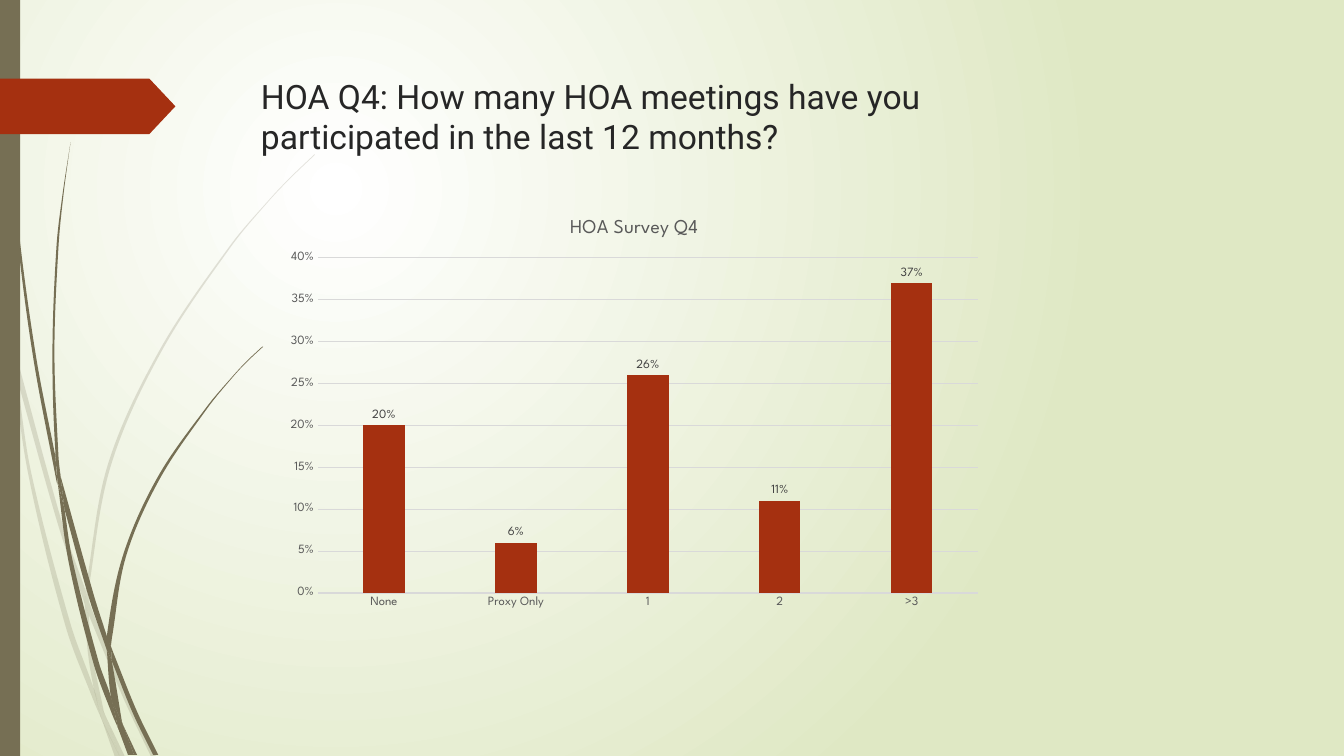
import math
from dataclasses import dataclass

from lxml import etree
from pptx import Presentation, util as u
from pptx.chart import data as chart_data
from pptx.dml import color
from pptx.enum import chart as kinds, shapes, text
from pptx.oxml import ns


@dataclass(frozen=True)
class Theme:
    olive: str = "766F54"
    red: str = "A53010"
    glow: str = "FFFFFF"
    meadow: str = "DFE8C4"
    heading: str = "262626"
    muted: str = "595959"
    label: str = "404040"
    rule: str = "D9D9D9"
    black: str = "000000"
    heading_font: str = "Roboto"
    chart_font: str = "League Spartan"
    heading_size: int = 24
    chart_title_size: int = 14
    chart_size: int = 10
    axis_size: int = 9


THEME = Theme()

PALE_BLADES = [
    ([(0.11, 3.5), (0.09, 3.22), (0, 2.82)], [(0, 2.99), (0.1, 3.44), (0.11, 3.5)]),
    ([(0.17, 3.76), (0.58, 5.22), (0.84, 5.99)], [(0.85, 5.86), (0.62, 5.2), (0.14, 3.45)]),
    ([(0.88, 6.1), (1.23, 6.94), (1.5, 7.51)], [(1.55, 7.51), (1.27, 6.92), (0.92, 6.07), (0.88, 5.96)]),
    ([(1.05, 7.11), (1.19, 7.51)], [(1.24, 7.51), (1.05, 7.11)]),
    ([(0.11, 3.5), (0.28, 4.7), (0.65, 6.21), (0.92, 6.93), (1.01, 7.14)],
     [(0.99, 7.07), (0.93, 6.83), (0.7, 6.19), (0.31, 4.69), (0.17, 3.76)]),
    ([(0.84, 5.99), (0.87, 6.46), (0.93, 6.83), (0.96, 6.92), (1.05, 7.11)],
     [(1.03, 7.06), (0.91, 6.46), (0.88, 6.1)]),
    ([(0.88, 5.96), (0.88, 5.84), (1.1, 4.62), (1.6, 3.49), (2.29, 2.45), (2.68, 1.98), (2.9, 1.75), (3.12, 1.54)],
     [(3.12, 1.53), (2.89, 1.75), (2.68, 1.97), (2.28, 2.44), (1.58, 3.48), (1.07, 4.61), (0.85, 5.84)]),
    ([(1.01, 7.14), (1.14, 7.51)], [(1.19, 7.51), (1.01, 7.14)]),
    ([(0.88, 6.1), (0.88, 5.96)], [(0.85, 5.86), (0.84, 5.99)]),
    ([(0.93, 6.83), (0.99, 7.07), (1.01, 7.14), (1.19, 7.51)], [(1.05, 7.11), (0.96, 6.92), (0.93, 6.83)]),
]
DARK_BLADES = [
    ([(0.04, 0), (0.05, 0.48), (0.08, 1.09), (0.19, 2.32), (0.36, 3.55), (0.55, 4.53)],
     [(0.57, 4.81), (0.56, 4.77), (0.33, 3.55), (0.17, 2.33), (0.07, 1.1), (0.04, 0.48), (0.03, 0)]),
    ([(0.64, 5.05), (0.88, 5.92), (1.06, 6.45)], [(1.06, 6.31), (0.93, 5.9), (0.6, 4.72)]),
    ([(1.11, 6.56), (1.32, 7.08), (1.52, 7.49)], [(1.57, 7.49), (1.36, 7.06), (1.13, 6.49), (1.1, 6.41)]),
    ([(0.57, 4.77), (0.68, 5.57), (0.93, 6.59), (1.11, 7.08), (1.17, 7.22)],
     [(1.16, 7.17), (1.1, 6.91), (0.98, 6.57), (0.72, 5.56), (0.64, 5.05)]),
    ([(0.6, 4.72), (0.58, 4.53), (0.54, 3.49), (0.58, 2.45), (0.63, 1.93), (0.7, 1.41)],
     [(0.7, 1.41), (0.62, 1.93), (0.56, 2.45), (0.52, 3.49), (0.55, 4.49), (0.6, 4.72)]),
    ([(1.22, 7.19), (1.33, 7.49)], [(1.36, 7.49), (1.22, 7.19)]),
    ([(0.57, 4.77), (0.64, 5.05)], [(0.6, 4.72), (0.55, 4.49), (0.55, 4.53)]),
    ([(1.11, 6.33), (1.25, 5.52), (1.58, 4.76), (2.05, 4.06), (2.31, 3.74), (2.45, 3.59), (2.61, 3.44)],
     [(2.6, 3.44), (2.45, 3.58), (2.31, 3.73), (2.04, 4.05), (1.56, 4.74), (1.22, 5.51), (1.06, 6.31),
      (1.1, 6.41)]),
    ([(1.17, 7.22), (1.27, 7.49)], [(1.31, 7.49), (1.17, 7.22)]),
    ([(1.06, 6.45), (1.1, 6.91), (1.16, 7.06), (1.22, 7.19)], [(1.21, 7.16), (1.11, 6.56), (1.09, 6.51)]),
    ([(1.06, 6.45), (1.09, 6.51), (1.11, 6.56)], [(1.1, 6.41), (1.06, 6.31)]),
    ([(1.1, 6.91), (1.16, 7.17), (1.17, 7.22), (1.3, 7.49)],
     [(1.33, 7.49), (1.22, 7.19), (1.16, 7.06), (1.1, 6.91)]),
]


def rgb(value):
    return color.RGBColor.from_string(value)


def style_font(font, name, size, shade):
    font.name, font.size, font.bold = name, u.Pt(size), False
    font.color.rgb = rgb(shade)


def style_shape(shape, shade, alpha=None):
    shape.shadow.inherit = False
    shape.fill.solid()
    shape.fill.fore_color.rgb = rgb(shade)
    shape.line.fill.background()
    if alpha is not None:
        tint = shape._element.spPr.find(".//" + ns.qn("a:srgbClr"))
        etree.SubElement(tint, ns.qn("a:alpha"), val=str(alpha * 1000))


def paint_background(page):
    fill = page.background.fill
    fill.gradient()
    for stop, shade, position in zip(fill.gradient_stops, (THEME.glow, THEME.meadow), (0, 1)):
        stop.color.rgb = rgb(shade)
        stop.position = position
    linear = page._element.find(".//" + ns.qn("a:lin"))
    radial = etree.Element(ns.qn("a:path"), path="circle")
    etree.SubElement(radial, ns.qn("a:fillToRect"), l="50000", t="50000", r="100000", b="100000")
    linear.getparent().replace(linear, radial)


def handle(anchor, before, after, length):
    reach = length / 3 / (math.dist(before, after) or 1)
    return tuple(a + (end - start) * reach for a, start, end in zip(anchor, before, after))


def bend_edge(points, segments):
    padded = [points[0], *points, points[-1]]
    for a, b, c, d, segment in zip(padded, padded[1:], padded[2:], padded[3:], segments):
        length = math.dist(b, c)
        curve = etree.Element(ns.qn("a:cubicBezTo"))
        for x, y in (handle(b, a, c, length), handle(c, d, b, length), c):
            etree.SubElement(curve, ns.qn("a:pt"), x=str(round(x)), y=str(round(y)))
        segment.getparent().replace(segment, curve)


def add_blade(page, near_edge, far_edge, alpha):
    points = [(u.Inches(x), u.Inches(y)) for x, y in near_edge + far_edge]
    builder = page.shapes.build_freeform(*points[0], scale=1.0)
    builder.add_line_segments(points[1:], close=True)
    blade = builder.convert_to_shape()
    style_shape(blade, THEME.olive, alpha)
    geometry = blade._element.spPr.find(ns.qn("a:custGeom"))
    anchors = [(int(p.get("x")), int(p.get("y"))) for p in geometry.iter(ns.qn("a:pt"))]
    segments = list(geometry.iter(ns.qn("a:lnTo")))
    turn = len(near_edge)
    bend_edge(anchors[:turn], segments[:turn - 1])
    bend_edge(anchors[turn:], segments[turn:])


def add_block(page, kind, left, top, width, height, shade):
    block = page.shapes.add_shape(kind, *map(u.Inches, (left, top, width, height)))
    style_shape(block, shade)
    return block


def add_heading(page, words):
    box = page.shapes.add_textbox(*map(u.Inches, (2.49, 0.7, 8, 1.1)))
    frame = box.text_frame
    frame.word_wrap = True
    frame.vertical_anchor = text.MSO_ANCHOR.TOP
    frame.text = words
    style_font(frame.paragraphs[0].runs[0].font, THEME.heading_font, THEME.heading_size, THEME.heading)


def style_axis(axis):
    axis.major_tick_mark = axis.minor_tick_mark = kinds.XL_TICK_MARK.NONE
    style_font(axis.tick_labels.font, THEME.chart_font, THEME.axis_size, THEME.muted)


def style_rule(line):
    line.color.rgb = rgb(THEME.rule)
    line.width = u.Pt(0.75)


def add_survey_chart(page, title, answers):
    source = chart_data.CategoryChartData(number_format="0%")
    source.categories = list(answers)
    source.add_series("Series 1", answers.values())
    chart = page.shapes.add_chart(kinds.XL_CHART_TYPE.COLUMN_CLUSTERED,
                                  *map(u.Inches, (2.74, 1.99, 7.1, 4.13)), source).chart
    style_font(chart.font, THEME.chart_font, THEME.chart_size, THEME.black)
    chart.has_legend = False
    chart.chart_title.text_frame.text = title
    span = chart.chart_title.text_frame.paragraphs[0].runs[0]
    style_font(span.font, THEME.chart_font, THEME.chart_title_size, THEME.muted)
    style_axis(chart.category_axis)
    style_rule(chart.category_axis.format.line)
    scale = chart.value_axis
    style_axis(scale)
    scale.minimum_scale, scale.maximum_scale, scale.major_unit = 0, 0.4, 0.05
    scale.format.line.fill.background()
    style_rule(scale.major_gridlines.format.line)
    plot = chart.plots[0]
    plot.gap_width, plot.overlap, plot.vary_by_categories = 219, -27, False
    series = plot.series[0]
    series.format.fill.solid()
    series.format.fill.fore_color.rgb = rgb(THEME.red)
    labels = series.data_labels
    labels.show_value = True
    labels.position = kinds.XL_LABEL_POSITION.OUTSIDE_END
    style_font(labels.font, THEME.chart_font, THEME.axis_size, THEME.label)
    for numbers in (scale.tick_labels, labels):
        numbers.number_format, numbers.number_format_is_linked = "0%", False


def main():
    deck = Presentation()
    deck.slide_width, deck.slide_height = u.Inches(13.33), u.Inches(7.5)
    page = deck.slides.add_slide(deck.slide_layouts[6])
    paint_background(page)
    for blades, alpha in ((PALE_BLADES, 20), (DARK_BLADES, None)):
        for near_edge, far_edge in blades:
            add_blade(page, near_edge, far_edge, alpha)
    add_block(page, shapes.MSO_SHAPE.RECTANGLE, 0, 0, 0.2, 7.5, THEME.olive)
    arrow = add_block(page, shapes.MSO_SHAPE.PENTAGON, 0, 0.78, 1.74, 0.55, THEME.red)
    arrow.adjustments[0] = 0.47
    add_heading(page, "HOA Q4: How many HOA meetings have you participated in the last 12 months?")
    add_survey_chart(page, "HOA Survey Q4",
                     {"None": 0.2, "Proxy Only": 0.06, "1": 0.26, "2": 0.11, ">3": 0.37})
    deck.save("out.pptx")


if __name__ == "__main__":
    main()
